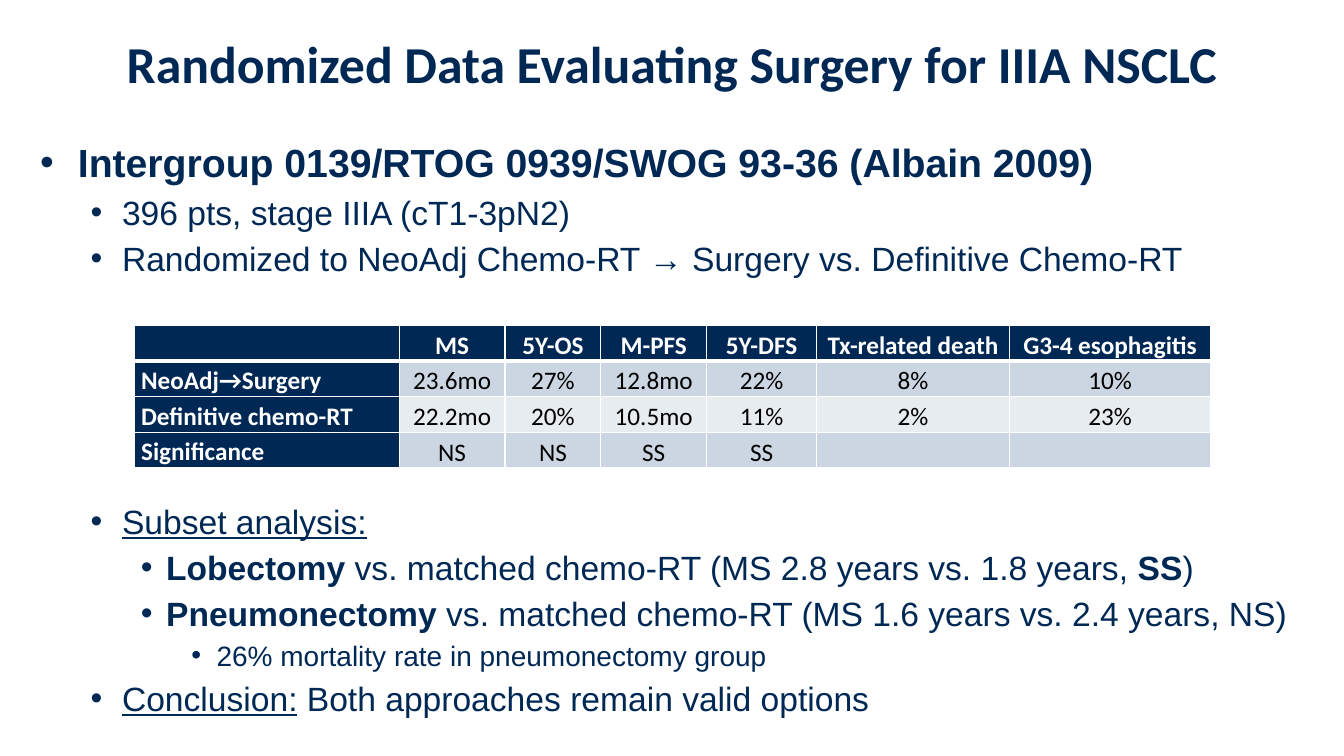
from lxml.etree import SubElement
from pptx import Presentation
from pptx.dml.color import RGBColor
from pptx.enum.text import MSO_ANCHOR as Anchor, PP_ALIGN as Align
from pptx.oxml.ns import qn
from pptx.util import Pt

NAVY, WHITE, BLACK = "002855", "FFFFFF", "000000"
BANDS = ["CCD6E2", "E7ECF1"]
HEADING_FONT, BODY_FONT = "Calibri", "Arial"

# Left indent and hanging width of the text, by outline level
INDENTS = [(27, 27), (58.5, 22.5), (90, 18), (126, 18)]

INTRO = [
    (0, 28, [("Intergroup 0139/RTOG 0939/SWOG 93-36 (Albain 2009)", "b")]),
    (1, 24, [("396 pts, stage IIIA (cT1-3pN2)", "")]),
    (1, 24, [("Randomized to NeoAdj Chemo-RT → Surgery vs. Definitive Chemo-RT", "")]),
]
FINDINGS = [
    (1, 24, [("Subset analysis:", "u")]),
    (2, 24, [("Lobectomy", "b"),
             (" vs. matched chemo-RT (MS 2.8 years vs. 1.8 years, ", ""),
             ("SS", "b"), (")", "")]),
    (2, 24, [("Pneumonectomy", "b"),
             (" vs. matched chemo-RT (MS 1.6 years vs. 2.4 years, NS)", "")]),
    (3, 20, [("26% mortality rate in pneumonectomy group", "")]),
    (1, 24, [("Conclusion:", "u"), (" Both approaches remain valid options", "")]),
]
OUTCOMES = [
    ["", "MS", "5Y-OS", "M-PFS", "5Y-DFS", "Tx-related death", "G3-4 esophagitis"],
    ["NeoAdj→Surgery", "23.6mo", "27%", "12.8mo", "22%", "8%", "10%"],
    ["Definitive chemo-RT", "22.2mo", "20%", "10.5mo", "11%", "2%", "23%"],
    ["Significance", "NS", "NS", "SS", "SS", "", ""],
]
COLUMN_WIDTHS = [189.4, 75.6, 68.4, 75.6, 78.5, 138, 143.5]


def color(value):
    return RGBColor.from_string(value)


class SlideBuilder:
    def __init__(self, page):
        self.page = page

    def style(self, font, name, size, shade, bold=False):
        font.name, font.size, font.bold = name, Pt(size), bold
        font.color.rgb = color(shade)

    def text_box(self, left, top, width, height, anchor=Anchor.TOP):
        box = self.page.shapes.add_textbox(Pt(left), Pt(top), Pt(width), Pt(height))
        frame = box.text_frame
        frame.word_wrap = True
        frame.vertical_anchor = anchor
        return frame

    def title(self, text):
        para = self.text_box(0, 0, 960, 90, Anchor.MIDDLE).paragraphs[0]
        para.text = text
        para.alignment = Align.CENTER
        self.style(para.font, HEADING_FONT, 37, NAVY, True)

    def bullet(self, para, level):
        indent, hanging = INDENTS[level]
        para.level = level
        props = para._p.get_or_add_pPr()
        props.set("marL", str(Pt(indent)))
        props.set("indent", str(-Pt(hanging)))
        shade = SubElement(props, qn("a:buClr"))
        SubElement(shade, qn("a:srgbClr"), val=NAVY)
        SubElement(props, qn("a:buFont"), typeface=BODY_FONT)
        SubElement(props, qn("a:buChar"), char="•")

    def outline(self, left, top, width, height, items):
        frame = self.text_box(left, top, width, height)
        for number, (level, size, spans) in enumerate(items):
            para = frame.add_paragraph() if number else frame.paragraphs[0]
            self.bullet(para, level)
            para.line_spacing = 1.1
            if number:
                para.space_before = Pt(1.4)
            self.style(para.font, BODY_FONT, size, NAVY)
            for text, marks in spans:
                span = para.add_run()
                span.text = text
                span.font.bold = "b" in marks
                span.font.underline = "u" in marks

    def borders(self, cell, bottom):
        props = cell._tc.get_or_add_tcPr()
        for side, weight in (("L", 1), ("R", 1), ("T", 1), ("B", bottom)):
            line = SubElement(props, qn(f"a:ln{side}"), w=str(Pt(weight)))
            fill = SubElement(line, qn("a:solidFill"))
            SubElement(fill, qn("a:srgbClr"), val=WHITE)

    def table(self, left, top, widths, row_height, rows):
        table = self.page.shapes.add_table(
            len(rows), len(widths), Pt(left), Pt(top),
            Pt(sum(widths)), Pt(row_height * len(rows))).table
        table.first_row = table.horz_banding = False
        for column, width in zip(table.columns, widths):
            column.width = Pt(width)
        for r, row in enumerate(rows):
            table.rows[r].height = Pt(row_height)
            for c, text in enumerate(row):
                heading = r == 0 or c == 0
                cell = table.cell(r, c)
                cell.margin_left = cell.margin_right = Pt(5)
                cell.margin_top = cell.margin_bottom = 0
                cell.vertical_anchor = Anchor.MIDDLE if c else Anchor.TOP
                self.borders(cell, 3 if r == 0 else 1)
                cell.fill.solid()
                cell.fill.fore_color.rgb = color(NAVY if heading else BANDS[(r - 1) % 2])
                para = cell.text_frame.paragraphs[0]
                para.text = text
                para.alignment = Align.CENTER if c else Align.LEFT
                para.line_spacing = 1.15
                self.style(para.font, HEADING_FONT, 18, WHITE if heading else BLACK, heading)


def main():
    deck = Presentation()
    deck.slide_width, deck.slide_height = Pt(960), Pt(540)
    builder = SlideBuilder(deck.slides.add_slide(deck.slide_layouts[6]))

    # Title and trial design
    builder.title("Randomized Data Evaluating Surgery for IIIA NSCLC")
    builder.outline(21.6, 92, 917.3, 110, INTRO)

    # Outcomes by arm
    builder.table(95.8, 232.6, COLUMN_WIDTHS, 25.4, OUTCOMES)

    # Subset analysis and conclusion
    builder.outline(21.6, 351, 917.3, 165, FINDINGS)

    deck.save("out.pptx")


if __name__ == "__main__":
    main()
